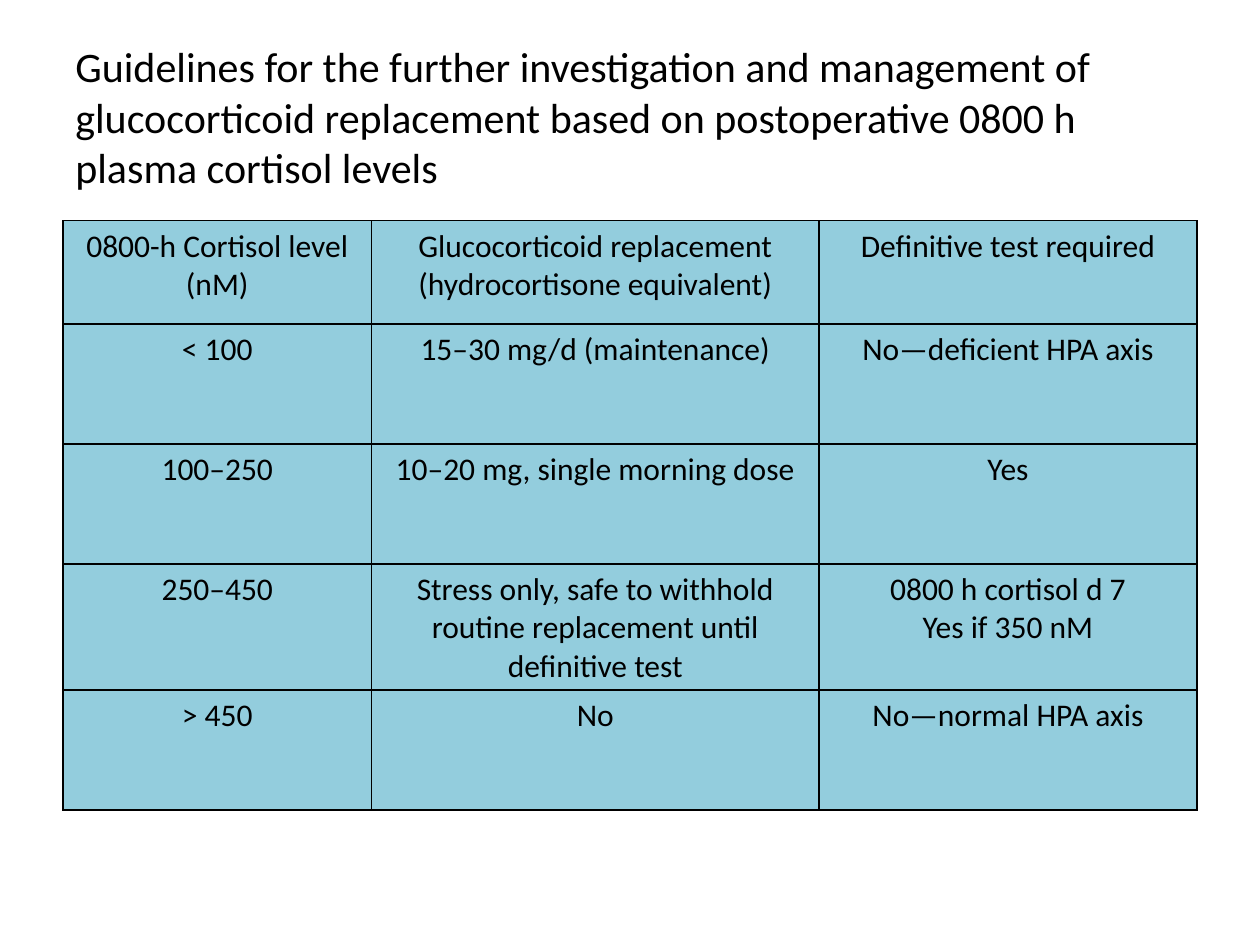
from pptx import Presentation
from pptx.dml.color import RGBColor as RGB
from pptx.enum.text import MSO_ANCHOR as Anchor, PP_ALIGN as Align
from pptx.oxml import parse_xml
from pptx.oxml.ns import nsdecls
from pptx.util import Cm, Pt

COLORS = {"text": "000000", "border": "000000", "cell": "93CDDD", "back": "FFFFFF"}

TITLE = ("Guidelines for the further investigation and management of "
         "glucocorticoid replacement based on postoperative 0800 h "
         "plasma cortisol levels")

# Each line of a cell is its own paragraph
ROWS = [
    ["0800-h Cortisol level\n(nM)",
     "Glucocorticoid replacement (hydrocortisone equivalent)",
     "Definitive test required"],
    ["< 100", "15–30 mg/d (maintenance)", "No—deficient HPA axis"],
    ["100–250", "10–20 mg, single morning dose", "Yes"],
    ["250–450",
     "Stress only, safe to withhold routine replacement until definitive test",
     "0800 h cortisol d 7\nYes if 350 nM"],
    ["> 450", "No", "No—normal HPA axis"],
]
COL_WIDTHS = [6.22, 9.02, 7.62]
ROW_HEIGHTS = [2.08] + [2.42] * 4


class SlideBuilder:
    font = "Calibri"

    def __init__(self, prs):
        self.s = prs.slides.add_slide(prs.slide_layouts[6])
        self.fill(self.s.background, "back")

    def fill(self, target, color):
        target.fill.solid()
        target.fill.fore_color.rgb = RGB.from_string(COLORS[color])

    def add_text(self, tf, text, size, align):
        for i, line in enumerate(text.split("\n")):
            p = tf.add_paragraph() if i else tf.paragraphs[0]
            p.alignment = align
            r = p.add_run()
            r.text = line
            r.font.name = self.font
            r.font.size = Pt(size)
            r.font.color.rgb = RGB.from_string(COLORS["text"])

    def title(self, text, left, top, width, height):
        tf = self.s.shapes.add_textbox(Cm(left), Cm(top), Cm(width), Cm(height)).text_frame
        tf.word_wrap = True
        tf.vertical_anchor = Anchor.MIDDLE
        self.add_text(tf, text, 24, Align.LEFT)

    def borders(self, cell):
        # Border lines must come before the fill in the cell properties
        tc_pr = cell._tc.get_or_add_tcPr()
        for i, side in enumerate(("lnL", "lnR", "lnT", "lnB")):
            tc_pr.insert(i, parse_xml(
                f'<a:{side} {nsdecls("a")} w="{Pt(1)}"><a:solidFill>'
                f'<a:srgbClr val="{COLORS["border"]}"/></a:solidFill></a:{side}>'))

    def table(self, rows, left, top, widths, heights):
        table = self.s.shapes.add_table(
            len(rows), len(widths), Cm(left), Cm(top),
            Cm(sum(widths)), Cm(sum(heights))).table
        for col, width in zip(table.columns, widths):
            col.width = Cm(width)
        for row, height, texts in zip(table.rows, heights, rows):
            row.height = Cm(height)
            for cell, text in zip(row.cells, texts):
                self.add_text(cell.text_frame, text, 18, Align.CENTER)
                self.fill(cell, "cell")
                self.borders(cell)


def main():
    prs = Presentation()
    prs.slide_width, prs.slide_height = Cm(25.4), Cm(19.05)
    slide = SlideBuilder(prs)

    # Heading
    slide.title(TITLE, 1.27, 0.76, 22.86, 3.18)

    # Cortisol guideline table
    slide.table(ROWS, 1.27, 4.45, COL_WIDTHS, ROW_HEIGHTS)

    prs.save("out.pptx")


if __name__ == "__main__":
    main()
